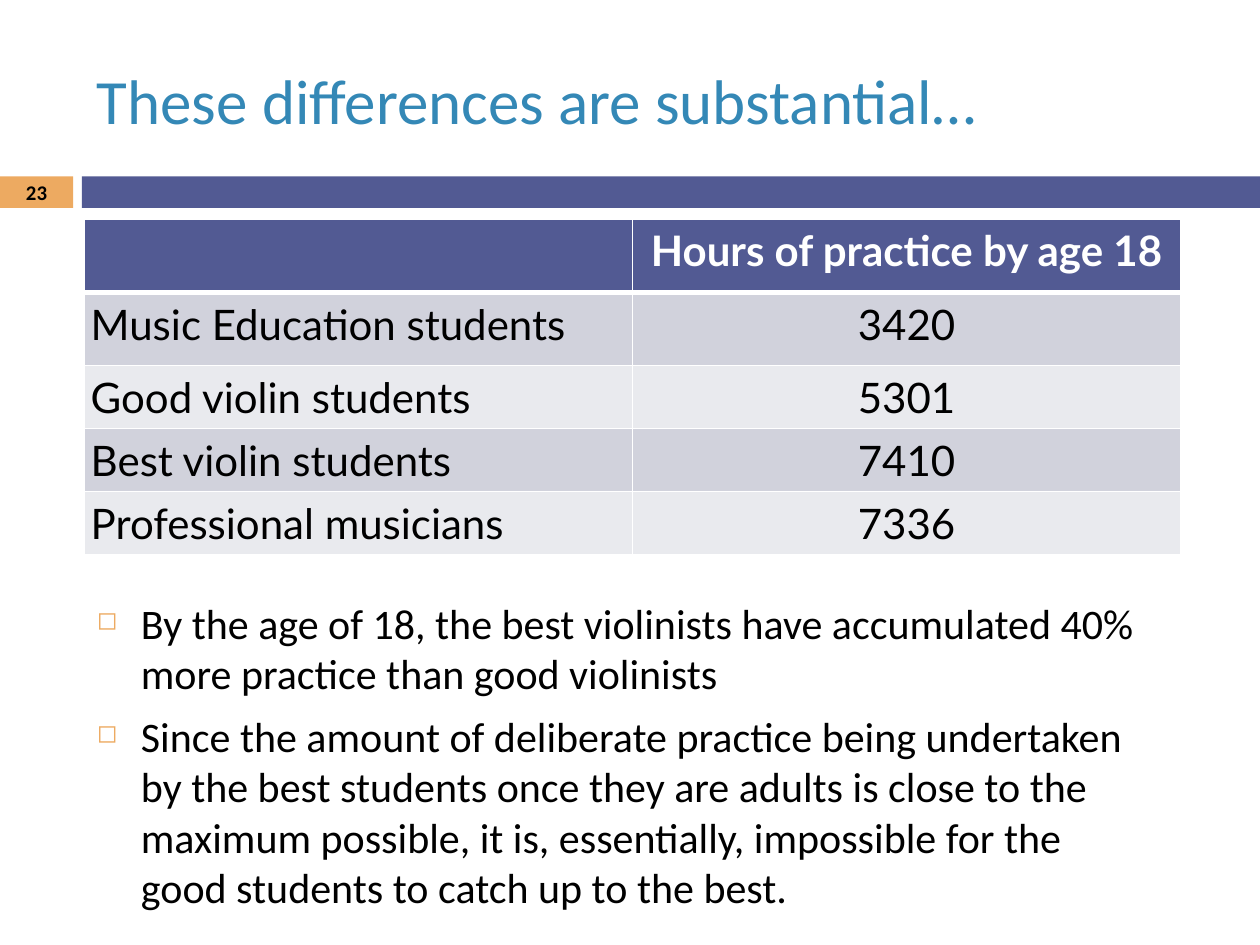
from dataclasses import dataclass

from lxml import etree
from pptx import Presentation
from pptx.dml.color import RGBColor
from pptx.enum import shapes, text
from pptx.oxml import ns
from pptx.util import Inches, Pt


@dataclass(frozen=True)
class Theme:
    blue: str = "3488B6"
    navy: str = "525A93"
    gold: str = "EDAA61"
    dark: str = "D1D2DC"
    light: str = "E9EAEE"
    white: str = "FFFFFF"
    black: str = "000000"
    font: str = "Calibri"
    grid: str = "Lato"
    title: float = 36
    body: float = 24
    small: float = 11.9


T = Theme()


def write(para, words, size, color, font=T.font, bold=False):
    run = para.add_run()
    run.text = words
    run.font.size = Pt(size)
    run.font.name = font
    run.font.bold = bold
    run.font.color.rgb = RGBColor.from_string(color)


def add_xml(parent, tag, **attrs):
    return etree.SubElement(parent, ns.qn(tag), attrs)


deck = Presentation()
deck.slide_width, deck.slide_height = Inches(10), Inches(7.5)
slide = deck.slides.add_slide(deck.slide_layouts[6])

# Band under the title
for left, width, color in ((0, 0.58, T.gold), (0.65, 9.35, T.navy)):
    bar = slide.shapes.add_shape(
        shapes.MSO_SHAPE.RECTANGLE, Inches(left), Inches(1.4), Inches(width), Inches(0.25))
    bar.shadow.inherit = False
    bar.fill.solid()
    bar.fill.fore_color.rgb = RGBColor.from_string(color)
    bar.line.fill.background()

# Title, body and page number frames
frames = []
for left, top, width, height, anchor in (
    (0.67, 0.25, 8.92, 1.08, text.MSO_ANCHOR.MIDDLE),
    (0.67, 4.69, 8.59, 2.81, text.MSO_ANCHOR.TOP),
    (0, 1.39, 0.58, 0.27, text.MSO_ANCHOR.MIDDLE),
):
    box = slide.shapes.add_textbox(Inches(left), Inches(top), Inches(width), Inches(height))
    frame = box.text_frame
    frame.word_wrap = True
    frame.vertical_anchor = anchor
    frames.append(frame)
title, body, page = frames

write(title.paragraphs[0], "These differences are substantial…", T.title, T.blue)
page.paragraphs[0].alignment = text.PP_ALIGN.CENTER
write(page.paragraphs[0], "23", T.small, T.black, bold=True)

# Practice table
rows = (
    ("", "Hours of practice by age 18"),
    ("Music Education students", "3420"),
    ("Good violin students", "5301"),
    ("Best violin students", "7410"),
    ("Professional musicians", "7336"),
)
table = slide.shapes.add_table(
    len(rows), 2, Inches(0.67), Inches(1.74), Inches(8.7), Inches(2.66)).table
for col in table.columns:
    col.width = Inches(4.35)
for i, row in enumerate(rows):
    head = i == 0
    table.rows[i].height = Inches(0.58 if i < 2 else 0.5)
    fill = T.navy if head else (T.dark if i % 2 else T.light)
    for j, words in enumerate(row):
        cell = table.cell(i, j)
        cell.margin_left = cell.margin_right = Inches(0.05)
        cell.margin_top = cell.margin_bottom = Inches(0.05)
        para = cell.text_frame.paragraphs[0]
        if j == 1:
            para.alignment = text.PP_ALIGN.CENTER
        if words:
            write(para, words, T.body, T.white if head else T.black, T.grid, head)
        props = cell._tc.get_or_add_tcPr()
        for side in "LRTB":
            thick = (head and side == "B") or (i == 1 and side == "T")
            line = add_xml(props, f"a:ln{side}", w=str(Pt(3 if thick else 1)))
            add_xml(add_xml(line, "a:solidFill"), "a:srgbClr", val=T.white)
        cell.fill.solid()
        cell.fill.fore_color.rgb = RGBColor.from_string(fill)

# Bullets
points = (
    "By the age of 18, the best violinists have accumulated 40% more practice "
    "than good violinists",
    "Since the amount of deliberate practice being undertaken by the best students "
    "once they are adults is close to the maximum possible, it is, essentially, "
    "impossible for the good students to catch up to the best.",
)
for i, words in enumerate(points):
    para = body.add_paragraph() if i else body.paragraphs[0]
    para.space_before = Pt(7)
    props = para._p.get_or_add_pPr()
    props.set("marL", str(Inches(0.35)))
    props.set("indent", str(Inches(-0.35)))
    add_xml(add_xml(props, "a:buClr"), "a:srgbClr", val=T.gold)
    add_xml(props, "a:buSzPct", val="60000")
    add_xml(props, "a:buChar", char="◻")
    write(para, words, T.body, T.black)

deck.save("out.pptx")
